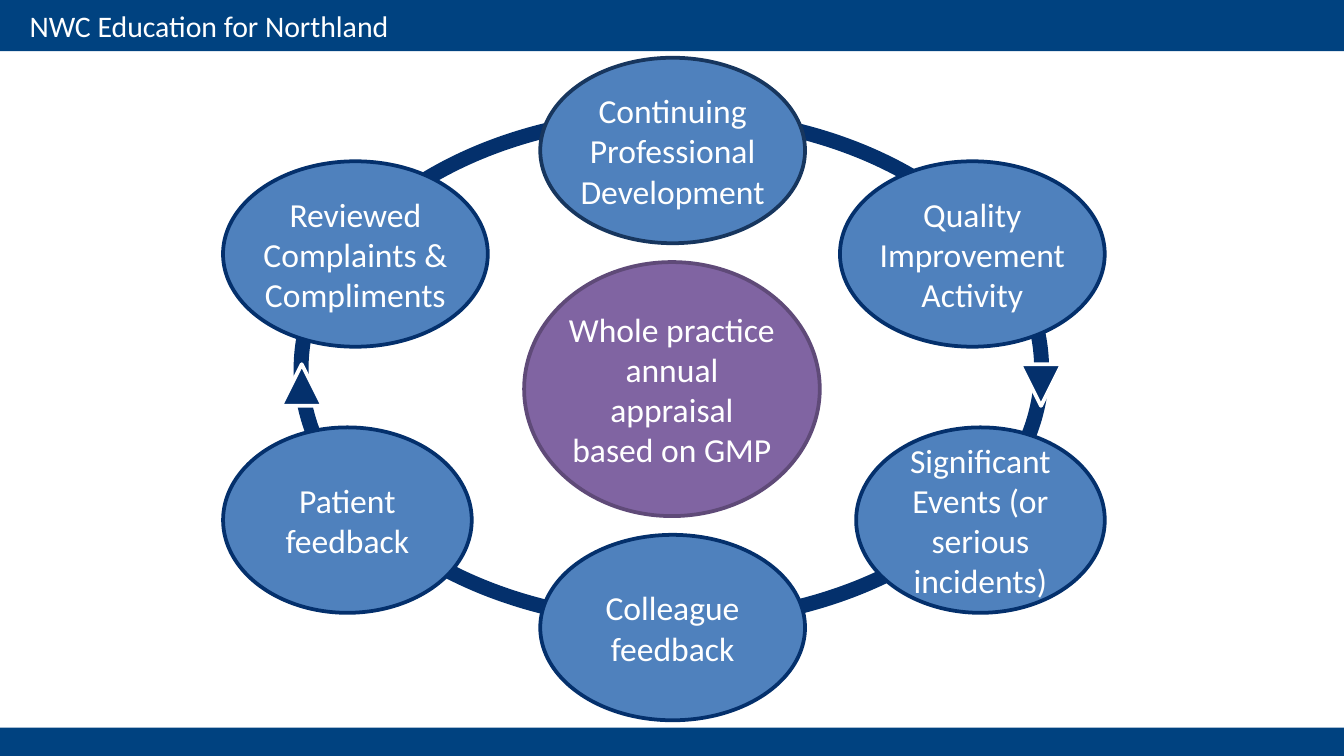
from dataclasses import dataclass

from pptx import Presentation
from pptx import util as u
from pptx.dml.color import RGBColor
from pptx.enum import shapes, text

COLUMNS, ROWS = 100, 56.25
CELL = 0.1
NAVY, BAND, BLUE, PURPLE, WHITE = "04306C", "004280", "4F81BD", "8064A2", "FFFFFF"
LEFT_EDGE, RIGHT_EDGE, NODE_HEIGHT = 16.6, 82.2, 13.8
WIDE, NARROW = 19.7, 18.5
UPPER, LOWER = 12, 31.8
ARROW = 3.1


@dataclass(frozen=True)
class Area:
    column: float
    row: float
    columns: float
    rows: float

    def lengths(self) -> list:
        cells = (self.column, self.row, self.columns, self.rows)
        return [u.Inches(cell * CELL) for cell in cells]


@dataclass(frozen=True)
class Node:
    label: str
    column: float
    row: float
    columns: float = WIDE
    rows: float = NODE_HEIGHT
    fill: str = BLUE
    line: str = NAVY


NODES = [
    Node("Continuing Professional Development", 40.2, 4.3, line="17365E"),
    Node("Reviewed Complaints & Compliments", LEFT_EDGE, UPPER),
    Node("Quality Improvement Activity", RIGHT_EDGE - WIDE, UPPER),
    Node("Significant Events (or serious incidents)", RIGHT_EDGE - NARROW, LOWER, NARROW),
    Node("Patient feedback", LEFT_EDGE, LOWER, NARROW),
    Node("Colleague feedback", 40.2, 39.8),
]
HUB = Node("Whole practice annual appraisal based on GMP",
           39, 19.5, 22, 18.9, PURPLE, "5F4A78")


def color(value: str) -> RGBColor:
    return RGBColor.from_string(value)


def write(shape, words: str, *, size: float, align, anchor, margins=(0, 0, 0, 0)) -> None:
    box = shape.text_frame
    box.word_wrap = True
    box.auto_size = text.MSO_AUTO_SIZE.NONE
    box.vertical_anchor = anchor
    box.margin_left, box.margin_top, box.margin_right, box.margin_bottom = map(u.Inches, margins)
    para = box.paragraphs[0]
    para.alignment = align
    span = para.add_run()
    span.text = words
    span.font.name = "Calibri"
    span.font.size = u.Pt(size)
    span.font.color.rgb = color(WHITE)


def draw(page, kind, area: Area, *, fill: str = "", line: str = "", weight: float = 2):
    shape = page.shapes.add_shape(kind, *area.lengths())
    shape.shadow.inherit = False
    if fill:
        shape.fill.solid()
        shape.fill.fore_color.rgb = color(fill)
    else:
        shape.fill.background()
    if line:
        shape.line.color.rgb = color(line)
        shape.line.width = u.Pt(weight)
    else:
        shape.line.fill.background()
    return shape


def draw_node(page, node: Node) -> None:
    area = Area(node.column, node.row, node.columns, node.rows)
    shape = draw(page, shapes.MSO_SHAPE.OVAL, area, fill=node.fill, line=node.line)
    write(shape, node.label, size=18, align=text.PP_ALIGN.CENTER,
          anchor=text.MSO_ANCHOR.MIDDLE)


def draw_header(page) -> None:
    for area in (Area(0, 54.15, COLUMNS, 2.1), Area(0, 0, COLUMNS, 3.8)):
        draw(page, shapes.MSO_SHAPE.RECTANGLE, area, fill=BAND)
    title = page.shapes.title
    title.left, title.top, title.width, title.height = Area(1.2, 0.1, 42.5, 3.7).lengths()
    write(title, "NWC Education for Northland", size=16, align=text.PP_ALIGN.LEFT,
          anchor=text.MSO_ANCHOR.TOP, margins=(0.1, 0.05, 0.1, 0.05))
    title.element.getparent().append(title.element)


def main() -> None:
    deck = Presentation()
    deck.slide_width = u.Inches(COLUMNS * CELL)
    deck.slide_height = u.Inches(ROWS * CELL)
    page = deck.slides.add_slide(deck.slide_layouts.get_by_name("Title Only"))
    draw_header(page)
    draw_node(page, HUB)
    draw(page, shapes.MSO_SHAPE.OVAL, Area(22.4, 8.6, 55.1, 37.7), line=NAVY, weight=8)
    for node in NODES:
        draw_node(page, node)
    for column, rotation in ((20.9, 0), (75.9, 180)):
        arrow = draw(page, shapes.MSO_SHAPE.ISOSCELES_TRIANGLE,
                     Area(column, 27.1, ARROW, ARROW), fill=NAVY, line=WHITE)
        arrow.rotation = rotation
    deck.save("out.pptx")


if __name__ == "__main__":
    main()
